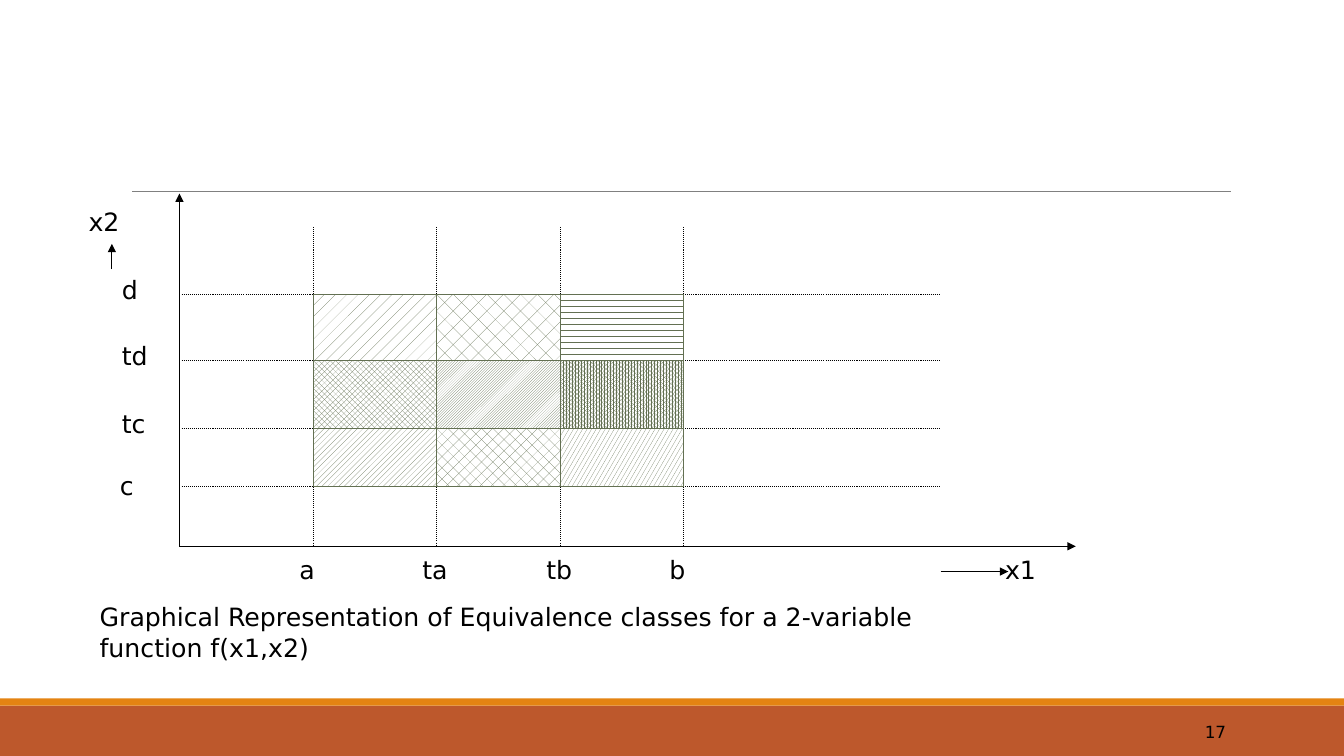
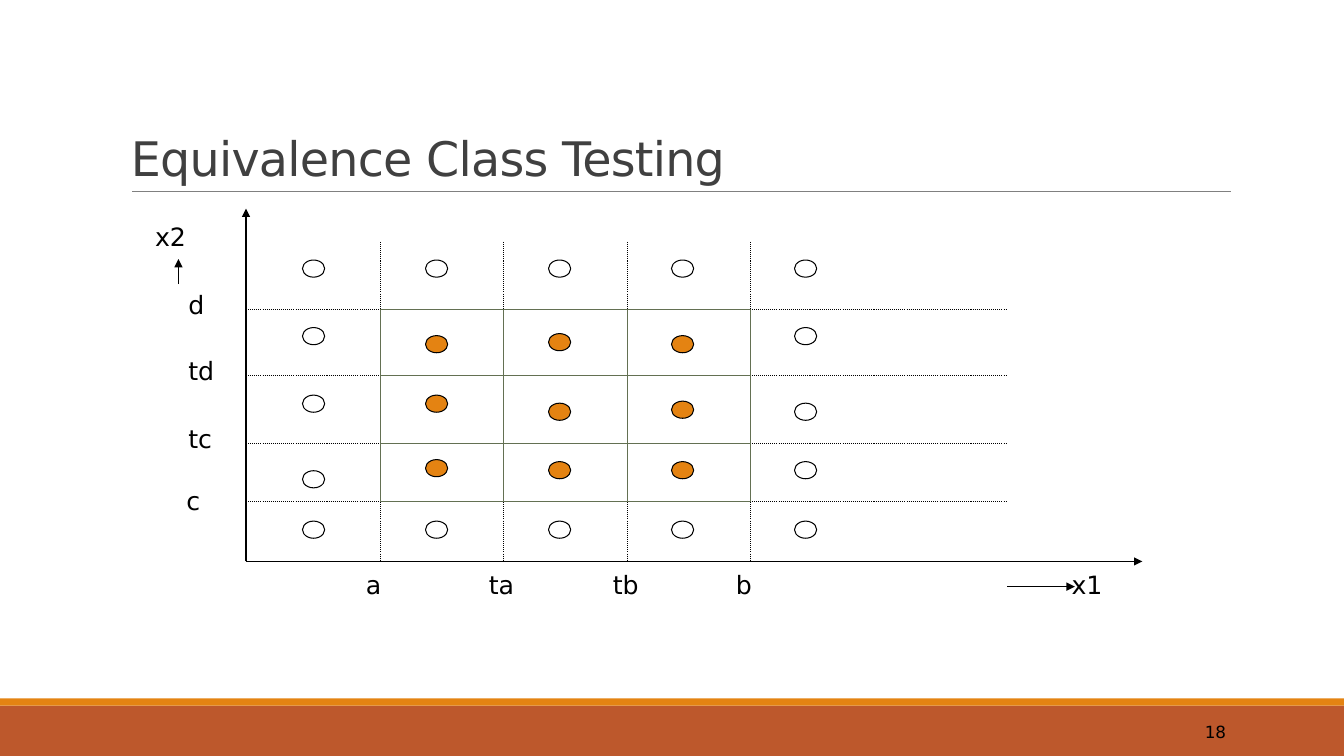
"""Build two slides on equivalence classes of a two-variable function."""
import dataclasses
import itertools
import typing

import lxml.etree
import pptx
import pptx.dml.color
import pptx.enum.dml
import pptx.enum.shapes
import pptx.enum.text
import pptx.oxml.ns
import pptx.util

Inches = pptx.util.Inches
Pt = pptx.util.Pt
Shape = pptx.enum.shapes.MSO_SHAPE
Pattern = pptx.enum.dml.MSO_PATTERN_TYPE
Anchor = pptx.enum.text.MSO_ANCHOR
Align = pptx.enum.text.PP_ALIGN
AutoSize = pptx.enum.text.MSO_AUTO_SIZE
SYS_DOT = pptx.enum.dml.MSO_LINE.ROUND_DOT

FONT = "DejaVu Sans"
BLACK, WHITE, GREY, TITLE = "000000", "FFFFFF", "808080", "404040"
RUST, ORANGE, GREEN = "BD582C", "E48312", "637052"

SLIDE_W, SLIDE_H = 13.33, 7.5
AXIS_W, AXIS_H = 8.89, 3.5
DOTTED_W, DOTTED_H = 7.55, 3.17
COLUMNS = (1.33, 2.55, 3.78, 5.0)
ROWS = (-2.5, -1.84, -1.17, -0.59)
LABEL_W, LABEL_H = 0.6, 0.4

PATTERNS = (
    (Pattern.PERCENT_10, Pattern.DIAGONAL_BRICK, Pattern.DASHED_HORIZONTAL),
    (Pattern.SOLID_DIAMOND, Pattern.DARK_UPWARD_DIAGONAL, Pattern.PERCENT_80),
    (Pattern.WIDE_UPWARD_DIAGONAL, Pattern.PERCENT_25, Pattern.LARGE_CONFETTI),
)

POINT_W, POINT_H, POINT_LEFT, POINT_STEP = 0.22, 0.17, 3.0, 1.22
POINT_TOPS = (
    (2.58, 2.58, 2.58, 2.58, 2.58),
    (3.25, 3.33, 3.31, 3.33, 3.25),
    (3.92, 3.92, 4.0, 3.98, 4.0),
    (4.67, 4.56, 4.58, 4.58, 4.58),
    (5.17, 5.17, 5.17, 5.17, 5.17),
)


class Box(typing.NamedTuple):
    """A rectangle in inches."""
    left: float
    top: float
    width: float
    height: float


class Label(typing.NamedTuple):
    """A plot label placed relative to the origin."""
    text: str
    dx: float
    dy: float


@dataclasses.dataclass(frozen=True)
class Line:
    """A straight line with its look."""
    x1: float
    y1: float
    x2: float
    y2: float
    color: str = BLACK
    width: float = 0.75
    dotted: bool = False
    arrow: bool = False


LABELS = (
    Label("x1", 8.09, 0.03),
    Label("x2", -1.0, -3.42),
    *(Label(t, x - 0.24, 0.03) for t, x in zip(("a", "ta", "tb", "b"), COLUMNS)),
    *(Label(t, -0.67, y - 0.25) for t, y in zip(("d", "td", "tc"), ROWS)),
    Label("c", -0.69, -0.8),
)

PLOT_LINES = (
    Line(0, 0, AXIS_W, 0, arrow=True),
    Line(0, 0, 0, -AXIS_H, arrow=True),
    *(Line(0, y, DOTTED_W, y, dotted=True) for y in ROWS),
    *(Line(x, -DOTTED_H, x, 0, dotted=True) for x in COLUMNS),
    *(Line(COLUMNS[0], y, COLUMNS[-1], y) for y in ROWS),
    *(Line(x, ROWS[0], x, ROWS[-1]) for x in COLUMNS),
    Line(DOTTED_W, 0.25, 8.22, 0.25, arrow=True),
    Line(-0.67, -2.75, -0.67, -3.0, arrow=True),
)


def rgb(value: str) -> pptx.dml.color.RGBColor:
    """Turn a hex string into a colour."""
    return pptx.dml.color.RGBColor.from_string(value)


def set_all(target: typing.Any, formats: dict[str, typing.Any]) -> None:
    """Set each named attribute on the target."""
    for name, value in formats.items():
        setattr(target, name, value)


def add_line(shapes: typing.Any, line: Line, x: float = 0, y: float = 0) -> None:
    """Draw a line, shifted by x and y."""
    ends = (x + line.x1, y + line.y1, x + line.x2, y + line.y2)
    sp = shapes.add_connector(pptx.enum.shapes.MSO_CONNECTOR.STRAIGHT, *map(Inches, ends))
    sp.line.color.rgb = rgb(line.color)
    sp.line.width = Pt(line.width)
    if line.dotted:
        sp.line.dash_style = SYS_DOT
    qn = pptx.oxml.ns.qn
    if line.arrow:
        ln = sp.line._get_or_add_ln()
        lxml.etree.SubElement(ln, qn("a:tailEnd"), type="triangle")
    lxml.etree.SubElement(sp._element.spPr, qn("a:effectLst"))


def add_shape(shapes: typing.Any, kind: Shape, box: Box, fill: str | None = None,
              outline: str | None = None, pattern: Pattern | None = None) -> None:
    """Draw a preset shape with a plain, patterned or empty fill."""
    sp = shapes.add_shape(kind, *map(Inches, box))
    sp.shadow.inherit = False
    if pattern is not None:
        sp.fill.patterned()
        sp.fill.pattern = pattern
        sp.fill.fore_color.rgb = rgb(GREEN)
        sp.fill.back_color.rgb = rgb(WHITE)
    elif fill:
        sp.fill.solid()
        sp.fill.fore_color.rgb = rgb(fill)
    else:
        sp.fill.background()
    if outline:
        sp.line.color.rgb = rgb(outline)
        sp.line.width = Pt(0.75)
    else:
        sp.line.fill.background()


def add_text(shapes: typing.Any, box: Box, lines: typing.Sequence[str], size: float = 18,
             color: str = BLACK, frame: dict[str, typing.Any] | None = None,
             paragraph: dict[str, typing.Any] | None = None, spacing: int = 0) -> None:
    """Write one paragraph per line in a text box."""
    tf = shapes.add_textbox(*map(Inches, box)).text_frame
    set_all(tf, {"word_wrap": True, **(frame or {})})
    for i, text in enumerate(lines):
        p = tf.add_paragraph() if i else tf.paragraphs[0]
        set_all(p, paragraph or {})
        r = p.add_run()
        r.text = text
        set_all(r.font, {"name": FONT, "size": Pt(size)})
        r.font.color.rgb = rgb(color)
        if spacing:
            r._r.get_or_add_rPr().set("spc", str(spacing))


def add_base(prs: typing.Any, number: int, title: str = "") -> typing.Any:
    """Add a blank slide with bands, rule, number and optional title."""
    s = prs.slides.add_slide(prs.slide_layouts[6])
    add_shape(s.shapes, Shape.RECTANGLE, Box(0, 7, SLIDE_W, 0.5), RUST)
    add_shape(s.shapes, Shape.RECTANGLE, Box(0, 6.93, SLIDE_W, 0.07), ORANGE)
    add_line(s.shapes, Line(1.31, 1.9, 12.21, 1.9, GREY, 0.5))
    add_text(s.shapes, Box(10.83, 7.06, 1.43, 0.4), [str(number)], 12,
             frame={"vertical_anchor": Anchor.MIDDLE},
             paragraph={"alignment": Align.RIGHT})
    if title:
        add_text(s.shapes, Box(1.2, 0.31, 11, 1.59), [title], 34, TITLE,
                 frame={"vertical_anchor": Anchor.BOTTOM},
                 paragraph={"line_spacing": 0.85}, spacing=-50)
    return s


def add_plot(s: typing.Any, x: float, y: float, patterned: bool) -> None:
    """Draw the grouped axes, labels and class cells from an origin."""
    shapes = s.shapes.add_group_shape().shapes
    for line in PLOT_LINES:
        add_line(shapes, line, x, y)
    for label in LABELS:
        add_text(shapes, Box(x + label.dx, y + label.dy, LABEL_W, LABEL_H), [label.text])
    for row, col in itertools.product(range(3), repeat=2):
        left, right = COLUMNS[col:col + 2]
        top, bottom = ROWS[row:row + 2]
        add_shape(shapes, Shape.RECTANGLE, Box(x + left, y + top, right - left, bottom - top),
                  WHITE, GREEN, PATTERNS[row][col] if patterned else None)


def add_points(s: typing.Any) -> None:
    """Draw the test points, filled inside the valid classes."""
    for row, tops in enumerate(POINT_TOPS):
        for col, top in enumerate(tops):
            valid = 0 < row < 4 and 0 < col < 4
            box = Box(POINT_LEFT + col * POINT_STEP, top, POINT_W, POINT_H)
            add_shape(s.shapes, Shape.OVAL, box, ORANGE if valid else None, BLACK)


def main() -> None:
    """Build and save the presentation."""
    prs = pptx.Presentation()
    set_all(prs, {"slide_width": Inches(SLIDE_W), "slide_height": Inches(SLIDE_H)})

    s = add_base(prs, 17)
    add_plot(s, 1.78, 5.42, patterned=True)
    add_text(s.shapes, Box(0.89, 5.92, 8.34, 0.71),
             ["Graphical Representation of Equivalence classes for a 2-variable",
              "function f(x1,x2)"],
             frame={"word_wrap": False, "auto_size": AutoSize.SHAPE_TO_FIT_TEXT})

    s = add_base(prs, 18, "Equivalence Class Testing")
    add_plot(s, 2.44, 5.57, patterned=False)
    add_points(s)

    prs.save("out.pptx")


if __name__ == "__main__":
    main()
